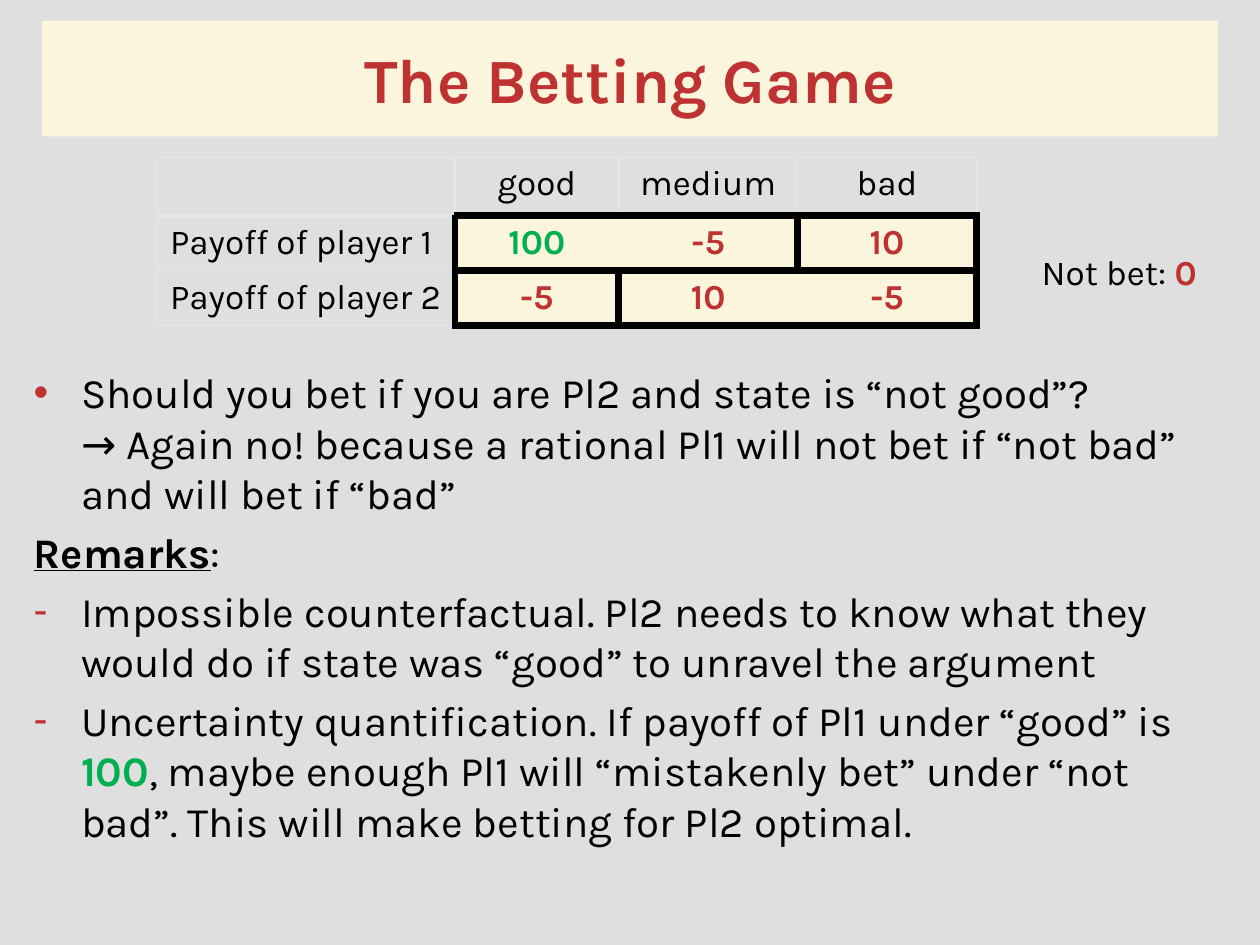
from dataclasses import dataclass

import lxml.etree
import pptx
import pptx.dml.color
import pptx.enum.shapes
import pptx.enum.text
import pptx.oxml.ns
import pptx.util

Pt = pptx.util.Pt
qn = pptx.oxml.ns.qn
Align = pptx.enum.text.PP_ALIGN
FONT = "Karla"
GREY, CREAM, BLACK = "DFDFDF", "FAF5DC", "000000"
RED, GREEN, PALE = "BE3232", "00B050", "DCE8F4"
BODY_SIZE, SMALL_SIZE = 24, 20


@dataclass(frozen=True)
class Words:
    text: str
    color: str = BLACK
    bold: bool = False
    underline: bool = False


@dataclass(frozen=True)
class Point:
    words: tuple[Words, ...]
    bullet: str = ""


@dataclass(frozen=True)
class Payoff:
    words: Words
    thick: str
    thin: str = ""
    fill: str = CREAM
    align: Align = Align.CENTER


def rgb(color: str) -> pptx.dml.color.RGBColor:
    return pptx.dml.color.RGBColor.from_string(color)


def paint(fill, color: str) -> None:
    fill.solid()
    fill.fore_color.rgb = rgb(color)


def add_words(paragraph, words: Words, size: float) -> None:
    for number, line in enumerate(words.text.split("\n")):
        if number:
            paragraph.add_line_break()
        run = paragraph.add_run()
        run.text = line
        run.font.name = FONT
        run.font.size = Pt(size)
        run.font.bold = words.bold
        run.font.underline = words.underline
        run.font.color.rgb = rgb(words.color)


def add_bullet(paragraph, mark: str) -> None:
    properties = paragraph._p.get_or_add_pPr()
    properties.set("marL", str(Pt(27)))
    properties.set("indent", str(-Pt(27)))
    color = lxml.etree.SubElement(properties, qn("a:buClr"))
    lxml.etree.SubElement(color, qn("a:srgbClr"), val=RED)
    lxml.etree.SubElement(properties, qn("a:buFont"), typeface="Arial")
    lxml.etree.SubElement(properties, qn("a:buChar"), char=mark)


def add_borders(cell, thick: str, thin: str) -> None:
    properties = cell._tc.get_or_add_tcPr()
    for position, side in enumerate("LRTB"):
        border = lxml.etree.Element(qn(f"a:ln{side}"))
        if side in thick + thin:
            width, color = (4.5, BLACK) if side in thick else (1, PALE)
            border.set("w", str(Pt(width)))
            solid = lxml.etree.SubElement(border, qn("a:solidFill"))
            lxml.etree.SubElement(solid, qn("a:srgbClr"), val=color)
        else:
            lxml.etree.SubElement(border, qn("a:noFill"))
        properties.insert(position, border)


def add_title(slide, words: Words) -> None:
    banner = slide.shapes.add_shape(
        pptx.enum.shapes.MSO_SHAPE.RECTANGLE, Pt(24), Pt(12), Pt(672), Pt(66)
    )
    banner.shadow.inherit = False
    paint(banner.fill, CREAM)
    banner.line.fill.background()
    banner.text_frame.vertical_anchor = pptx.enum.text.MSO_ANCHOR.MIDDLE
    heading = banner.text_frame.paragraphs[0]
    heading.alignment = Align.CENTER
    add_words(heading, words, 36)


def add_discussion(slide, points: list[Point]) -> None:
    discussion = slide.shapes.add_textbox(Pt(12.2), Pt(90), Pt(696), Pt(438)).text_frame
    discussion.word_wrap = True
    discussion.margin_top = Pt(119.6)
    for number, point in enumerate(points):
        paragraph = discussion.add_paragraph() if number else discussion.paragraphs[0]
        paragraph.space_before = Pt(0.2 * BODY_SIZE if number else 0)
        if point.bullet:
            add_bullet(paragraph, point.bullet)
        for words in point.words:
            add_words(paragraph, words, BODY_SIZE)


def add_payoffs(slide, rows: list[list[Payoff]]) -> None:
    widths, heights = (170, 93.6, 102.2, 102.2), (33.4, 31.2, 31.2)
    payoffs = slide.shapes.add_table(
        len(heights), len(widths), Pt(90), Pt(90), Pt(sum(widths)), Pt(sum(heights))
    ).table
    payoffs.first_row = payoffs.horz_banding = False
    for column, width in zip(payoffs.columns, widths):
        column.width = Pt(width)
    for row, height in zip(payoffs.rows, heights):
        row.height = Pt(height)
    for row, entries in zip(payoffs.rows, rows):
        for cell, entry in zip(row.cells, entries):
            paint(cell.fill, entry.fill)
            add_borders(cell, entry.thick, entry.thin)
            paragraph = cell.text_frame.paragraphs[0]
            paragraph.alignment = entry.align
            if entry.words.text:
                add_words(paragraph, entry.words, SMALL_SIZE)


def add_outside_option(slide, parts: list[Words]) -> None:
    option = slide.shapes.add_textbox(Pt(588.2), Pt(139.7), Pt(108), Pt(31.5)).text_frame
    option.word_wrap = True
    for words in parts:
        add_words(option.paragraphs[0], words, SMALL_SIZE)


def state(name: str) -> Payoff:
    return Payoff(Words(name), "B", "LTR", GREY)


def player(number: int) -> Payoff:
    return Payoff(Words(f"Payoff of player {number}"), "R", "LTB", GREY, Align.LEFT)


def amount(value: str, thick: str, color: str = RED) -> Payoff:
    return Payoff(Words(value, color, True), thick)


def main() -> None:
    deck = pptx.Presentation()
    deck.slide_width, deck.slide_height = Pt(720), Pt(540)
    slide = deck.slides.add_slide(deck.slide_layouts[6])
    paint(slide.background.fill, GREY)
    add_title(slide, Words("The Betting Game", RED, True))
    add_discussion(slide, [
        Point((Words(
            "Should you bet if you are Pl2 and state is “not good”?\n"
            "→ Again no! because a rational Pl1 will not bet if “not bad” "
            "and will bet if “bad”"
        ),), "•"),
        Point((Words("Remarks", bold=True, underline=True), Words(":"))),
        Point((Words(
            "Impossible counterfactual. Pl2 needs to know what they would do "
            "if state was “good” to unravel the argument"
        ),), "-"),
        Point((
            Words("Uncertainty quantification. If payoff of Pl1 under “good” is "),
            Words("100", GREEN, True),
            Words(
                ", maybe enough Pl1 will “mistakenly bet” under “not bad”. "
                "This will make betting for Pl2 optimal."
            ),
        ), "-"),
    ])
    add_payoffs(slide, [
        [Payoff(Words(""), "", "LRTB", GREY), state("good"), state("medium"), state("bad")],
        [player(1), amount("100", "LTB", GREEN), amount("-5", "TRB"), amount("10", "LRTB")],
        [player(2), amount("-5", "LRTB"), amount("10", "LTB"), amount("-5", "TRB")],
    ])
    add_outside_option(slide, [Words("Not bet: "), Words("0", RED, True)])
    deck.save("out.pptx")


if __name__ == "__main__":
    main()
